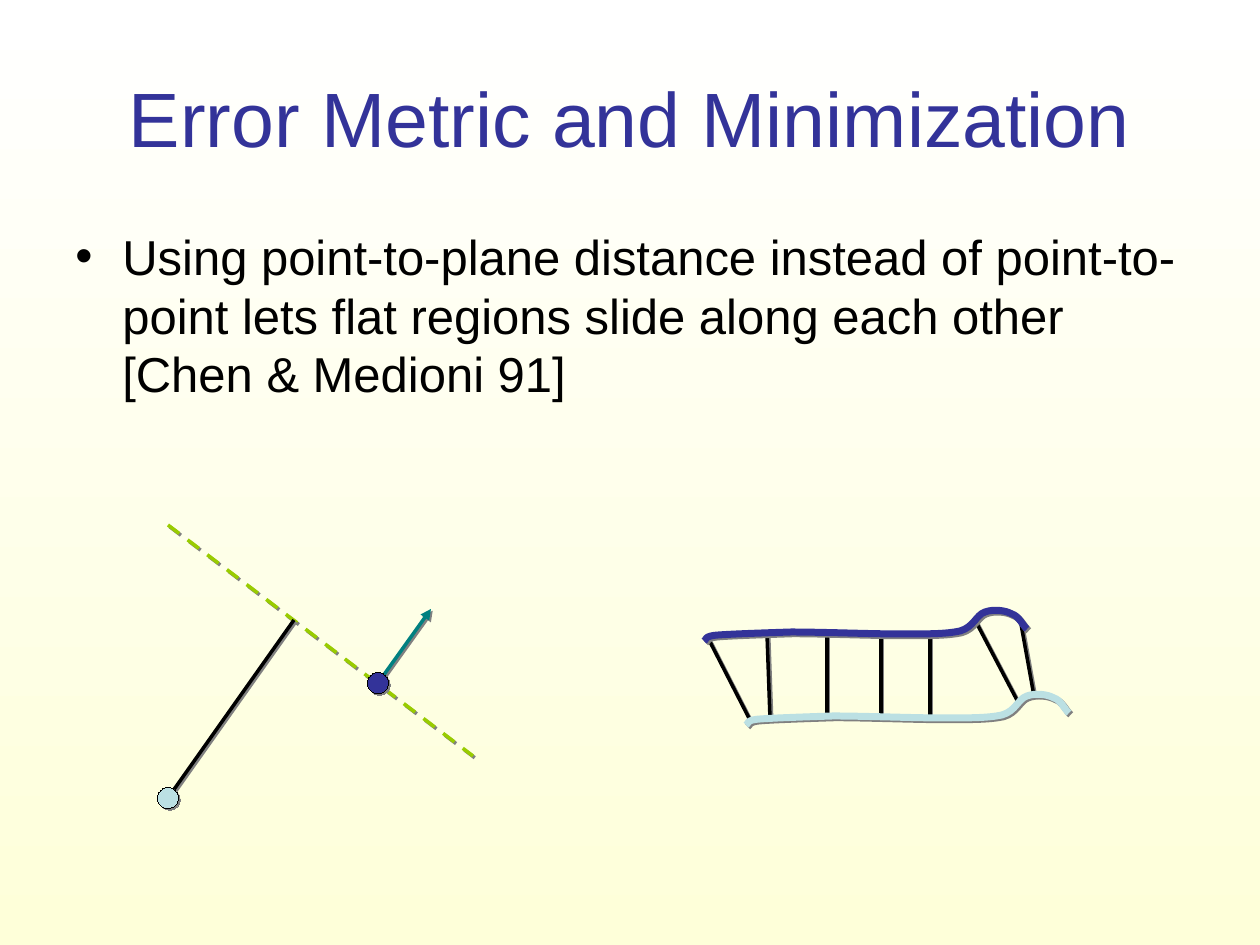
from lxml import etree
from pptx import Presentation
from pptx.dml.color import RGBColor
from pptx.enum.dml import MSO_LINE
from pptx.enum.shapes import MSO_CONNECTOR, MSO_SHAPE
from pptx.enum.text import MSO_ANCHOR, PP_ALIGN
from pptx.oxml import parse_xml
from pptx.oxml.ns import nsdecls, qn
from pptx.util import Pt

STRAIGHT = MSO_CONNECTOR.STRAIGHT
OVAL = MSO_SHAPE.OVAL
DASH = MSO_LINE.DASH
MIDDLE = MSO_ANCHOR.MIDDLE
CENTER = PP_ALIGN.CENTER

WHITE = RGBColor(0xFF, 0xFF, 0xFF)
CREAM = RGBColor(0xFE, 0xFF, 0xD9)
BLACK = RGBColor(0x00, 0x00, 0x00)
NAVY = RGBColor(0x33, 0x33, 0x99)
PALE = RGBColor(0xBB, 0xE0, 0xE3)
GREEN = RGBColor(0x99, 0xCC, 0x00)
TEAL = RGBColor(0x00, 0x80, 0x80)

EMU = 914400 / 126  # one px
HAIRLINE = 0.01


def px(*values):
    return [round(v * EMU) for v in values]


def style_line(sp, color, width):
    """Set the outline and the small grey shadow."""
    sp.line.color.rgb = color
    sp.line.width = Pt(width)
    sp._element.spPr.append(parse_xml(
        f'<a:effectLst {nsdecls("a")}>'
        '<a:outerShdw dist="17961" dir="2700000" algn="ctr" rotWithShape="0">'
        '<a:srgbClr val="808080"/></a:outerShdw></a:effectLst>'))


prs = Presentation()
prs.slide_width, prs.slide_height = px(1260, 945)
s = prs.slides.add_slide(prs.slide_layouts[6])

# Background
fill = s.background.fill
fill.gradient()
fill.gradient_angle = 270
for stop, color in zip(fill.gradient_stops, (WHITE, CREAM)):
    stop.color.rgb = color

# Title
tf = s.shapes.add_textbox(*px(63, 38, 1134, 158)).text_frame
tf.word_wrap = True
tf.vertical_anchor = MIDDLE
title = tf.paragraphs[0]
title.text = "Error Metric and Minimization"
title.alignment = CENTER

# Body with a hanging bullet
tf = s.shapes.add_textbox(*px(63, 220, 1134, 624)).text_frame
tf.word_wrap = True
body = tf.paragraphs[0]
body.text = ("Using point-to-plane distance instead of point-to-point lets flat "
             "regions slide along each other [Chen & Medioni 91]")
pPr = body._p.get_or_add_pPr()
indent = px(47)[0]
pPr.set("marL", str(indent))
pPr.set("indent", str(-indent))
etree.SubElement(pPr, qn("a:buFont")).set("typeface", "Arial")
etree.SubElement(pPr, qn("a:buChar")).set("char", "•")

for p, size, color in ((title, 44, NAVY), (body, 28, BLACK)):
    r = p.runs[0]
    r.font.name = "Arial"
    r.font.size = Pt(size)
    r.font.color.rgb = color

# Point-to-plane diagram, back to front: lines as ends, dots as centres
diagram = [
    ("plane", (168, 525, 473, 756), GREEN),
    ("normal", (378, 683, 431, 609), TEAL),
    ("dot", (378, 683), NAVY),
    ("distance", (168, 798, 294, 620), BLACK),
    ("dot", (168, 798), PALE),
]
for kind, place, color in diagram:
    if kind == "dot":
        x, y = place
        sp = s.shapes.add_shape(OVAL, *px(x - 10.5, y - 10.5, 21, 21))
        sp.fill.solid()
        sp.fill.fore_color.rgb = color
        style_line(sp, BLACK, HAIRLINE)
        continue
    sp = s.shapes.add_connector(STRAIGHT, *px(*place))
    style_line(sp, color, 2)
    if kind == "plane":
        sp.line.dash_style = DASH
    elif kind == "normal":
        etree.SubElement(sp.line._get_or_add_ln(), qn("a:tailEnd")).set("type", "triangle")

# Links between the two surfaces
surfaces = s.shapes.add_group_shape().shapes
links = [
    (708, 638, 751, 722), (767, 633, 770, 718), (827, 633, 827, 716),
    (881, 633, 881, 718), (975, 620, 1018, 702), (930, 635, 930, 717),
    (1021, 624, 1034, 696),
]
for ends in links:
    style_line(surfaces.add_connector(STRAIGHT, *px(*ends)), BLACK, 2)

# Two surfaces: a start, then three control points per curve; the second is shifted
curve = [
    (704, 641),
    (707, 640), (703, 636), (718, 635),
    (732, 634), (761, 633), (791, 632),
    (822, 632), (872, 634), (900, 634),
    (929, 634), (946, 634), (960, 631),
    (974, 627), (976, 615), (985, 612),
    (993, 609), (1005, 610), (1012, 614),
    (1019, 616), (1023, 626), (1027, 629),
]
for dx, dy, color in ((0, 0, NAVY), (42, 84, PALE)):
    outline = [px(x + dx, y + dy) for x, y in curve]
    fb = surfaces.build_freeform(*outline[0])
    fb.add_line_segments(outline[1:], close=False)
    sp = fb.convert_to_shape()
    # Join every three line points into one Bezier segment
    segments = list(sp._element.iter(qn("a:lnTo")))
    path = segments[0].getparent()
    for i in range(0, len(segments), 3):
        bezier = etree.SubElement(path, qn("a:cubicBezTo"))
        for segment in segments[i:i + 3]:
            bezier.append(segment[0])
            path.remove(segment)
    sp.fill.background()
    style_line(sp, color, 4)

prs.save("out.pptx")
